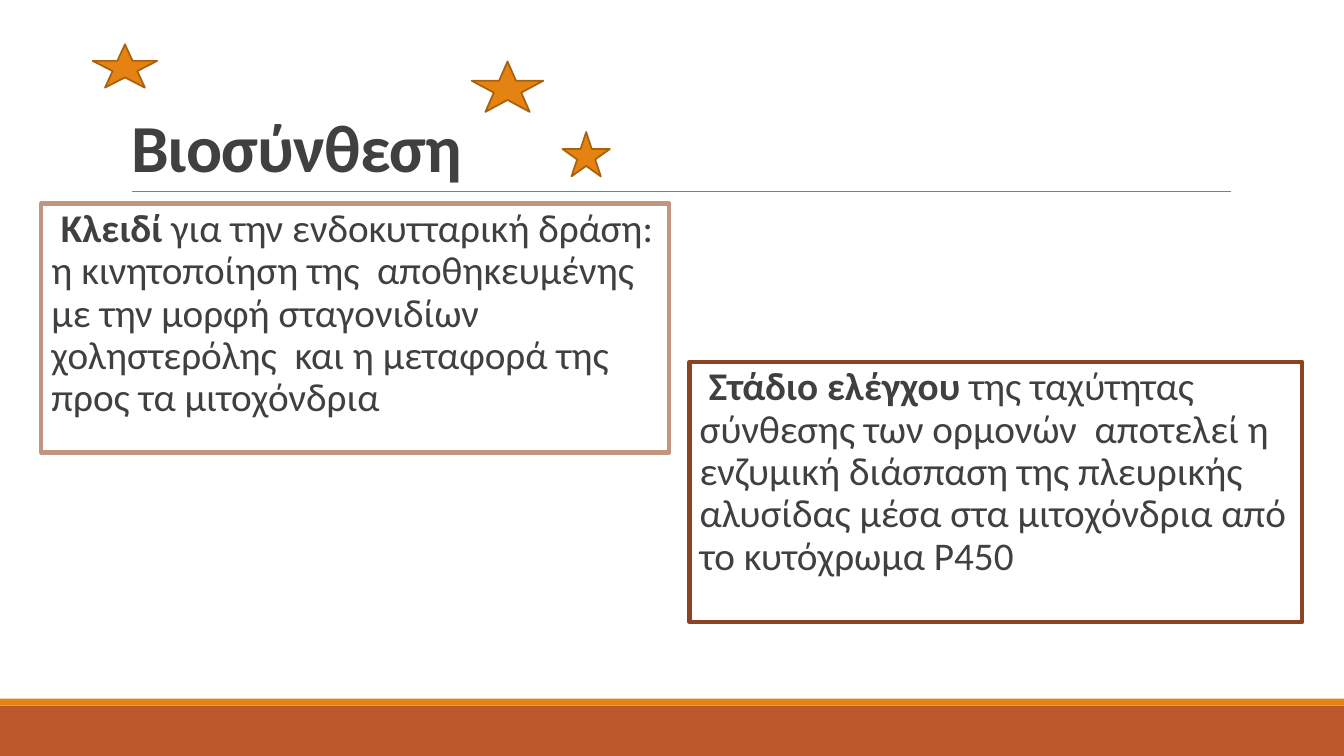
import dataclasses

import lxml.etree
import pptx
import pptx.dml.color
import pptx.enum.shapes
import pptx.enum.text
import pptx.oxml.ns
import pptx.util


@dataclasses.dataclass(frozen=True)
class Theme:
    font: str = "Calibri"
    text: str = "404040"
    orange: str = "E48312"
    rust: str = "BD582C"
    star_edge: str = "A9610D"
    rule: str = "808080"
    tan: str = "C29580"
    brown: str = "8E4221"
    title_size: int = 48
    body_size: int = 28
    box_line: float = 3
    star_line: float = 1.25
    rule_line: float = 0.5


THEME = Theme()
WIDTH = pptx.util.Inches(13.333)
HEIGHT = pptx.util.Inches(7.5)
SHAPES = pptx.enum.shapes.MSO_SHAPE
ANCHORS = pptx.enum.text.MSO_ANCHOR

FOOTER_BARS = [
    ((0, 93.33, 100, 6.67), THEME.rust),
    ((0, 92.4, 100, 0.93), THEME.orange),
]
STARS = [
    (35.1, 8.13, 5.33, 6.67),
    (41.85, 17.47, 3.53, 5.87),
    (6.9, 5.87, 4.8, 5.73),
]
NOTES = [
    (
        (3.08, 26.93, 46.73, 32.93),
        THEME.tan,
        "Κλειδί ",
        "για την ενδοκυτταρική δράση: η κινητοποίηση της  αποθηκευμένης με την "
        "μορφή σταγονιδίων χοληστερόλης  και η μεταφορά της προς τα μιτοχόνδρια",
    ),
    (
        (51.3, 47.87, 45.6, 34.4),
        THEME.brown,
        "Στάδιο ελέγχου ",
        "της ταχύτητας σύνθεσης των ορμονών  αποτελεί η ενζυμική διάσπαση της "
        "πλευρικής αλυσίδας μέσα στα μιτοχόνδρια από το κυτόχρωμα P450",
    ),
]


def across(percent):
    return round(WIDTH * percent / 100)


def down(percent):
    return round(HEIGHT * percent / 100)


def area(shares):
    left, top, width, height = shares
    return across(left), down(top), across(width), down(height)


def rgb(code):
    return pptx.dml.color.RGBColor.from_string(code)


def apply(target, values):
    for name, value in values.items():
        setattr(target, name, value)


def set_line(line, color, points):
    line.color.rgb = rgb(color)
    line.width = pptx.util.Pt(points)


def add_span(para, text, size, bold):
    span = para.add_run()
    span.text = text
    apply(span.font, {"name": THEME.font, "size": pptx.util.Pt(size), "bold": bold})
    span.font.color.rgb = rgb(THEME.text)
    return span


def add_figure(page, kind, shares, fill=None, edge=None, points=0):
    figure = page.shapes.add_shape(kind, *area(shares))
    figure.shadow.inherit = False
    if fill:
        figure.fill.solid()
        figure.fill.fore_color.rgb = rgb(fill)
    else:
        figure.fill.background()
    if edge:
        set_line(figure.line, edge, points)
    else:
        figure.line.fill.background()
    return figure


def add_rule(page, left, right, height):
    rule = page.shapes.add_connector(
        pptx.enum.shapes.MSO_CONNECTOR.STRAIGHT,
        across(left), down(height), across(right), down(height),
    )
    set_line(rule.line, THEME.rule, THEME.rule_line)
    properties = rule._element.spPr
    lxml.etree.SubElement(properties, pptx.oxml.ns.qn("a:effectLst"))


def set_title(page, shares, text):
    title = page.shapes.title
    apply(title, dict(zip(("left", "top", "width", "height"), area(shares))))
    apply(title.text_frame, {
        "vertical_anchor": ANCHORS.BOTTOM,
        "word_wrap": True,
        "auto_size": pptx.enum.text.MSO_AUTO_SIZE.NONE,
    })
    para = title.text_frame.paragraphs[0]
    apply(para, {"alignment": pptx.enum.text.PP_ALIGN.LEFT, "line_spacing": 0.85})
    span = add_span(para, text, THEME.title_size, True)
    span.font._element.set("spc", "-50")


def add_blank_bullet(para):
    properties = para._p.get_or_add_pPr()
    indent = pptx.util.Inches(0.1)
    properties.set("marL", str(indent))
    properties.set("indent", str(-indent))
    color = lxml.etree.SubElement(properties, pptx.oxml.ns.qn("a:buClr"))
    lxml.etree.SubElement(color, pptx.oxml.ns.qn("a:srgbClr"), val=THEME.orange)
    lxml.etree.SubElement(properties, pptx.oxml.ns.qn("a:buChar"), char=" ")


def add_note(page, shares, edge, lead, rest):
    box = add_figure(page, SHAPES.RECTANGLE, shares, edge=edge, points=THEME.box_line)
    apply(box.text_frame, {
        "margin_left": 0,
        "margin_right": 0,
        "margin_top": pptx.util.Inches(0.05),
        "margin_bottom": pptx.util.Inches(0.05),
        "vertical_anchor": ANCHORS.TOP,
        "word_wrap": True,
    })
    para = box.text_frame.paragraphs[0]
    apply(para, {
        "alignment": pptx.enum.text.PP_ALIGN.LEFT,
        "line_spacing": 0.9,
        "space_before": pptx.util.Pt(12),
        "space_after": pptx.util.Pt(2),
    })
    add_blank_bullet(para)
    add_span(para, lead, THEME.body_size, True)
    add_span(para, rest, THEME.body_size, False)


def main():
    deck = pptx.Presentation()
    apply(deck, {"slide_width": WIDTH, "slide_height": HEIGHT})
    page = deck.slides.add_slide(deck.slide_layouts[5])
    for shares, color in FOOTER_BARS:
        add_figure(page, SHAPES.RECTANGLE, shares, fill=color)
    add_rule(page, 9.83, 91.58, 25.33)
    set_title(page, (9, 4.13, 82.5, 21.2), "Βιοσύνθεση")
    for note in NOTES:
        add_note(page, *note)
    for shares in STARS:
        add_figure(page, SHAPES.STAR_5_POINT, shares,
                   THEME.orange, THEME.star_edge, THEME.star_line)
    deck.save("out.pptx")


if __name__ == "__main__":
    main()
